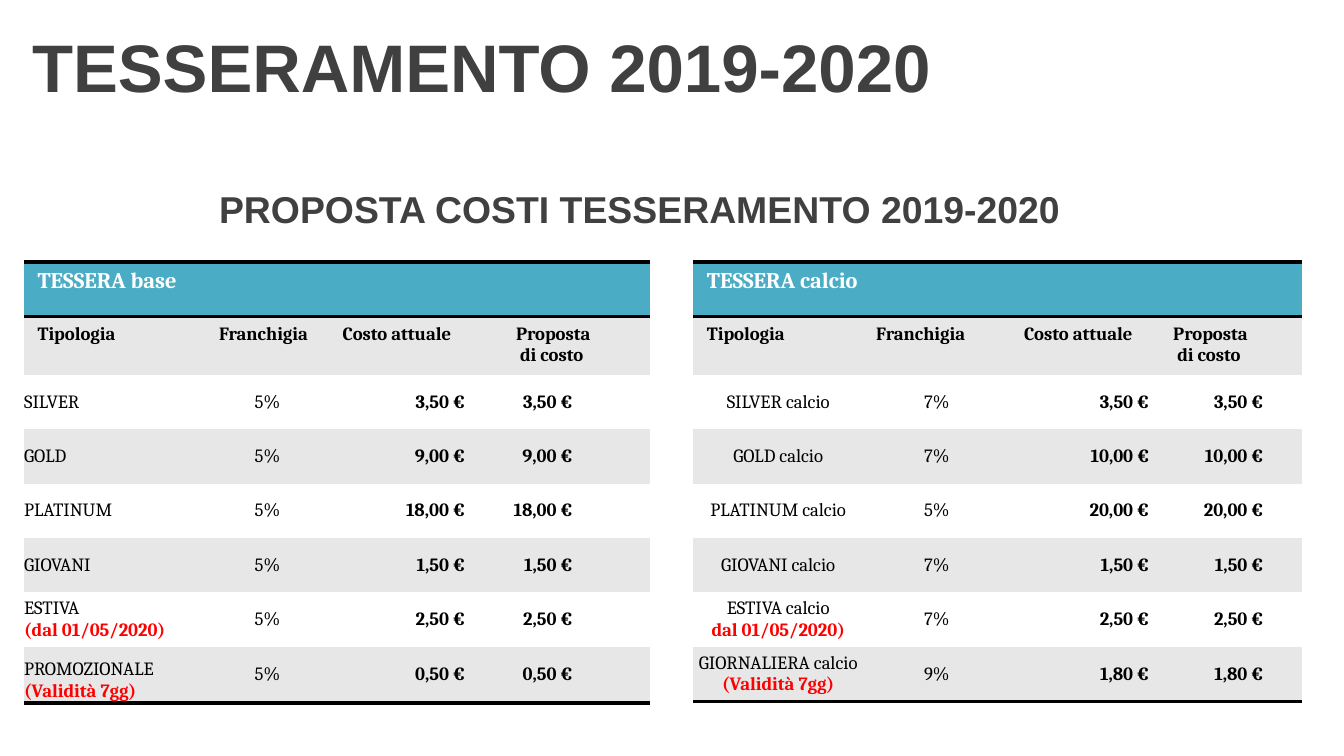
from pptx import Presentation
from pptx.dml.color import RGBColor
from pptx.enum.text import MSO_ANCHOR, PP_ALIGN
from pptx.oxml.ns import qn
from pptx.util import Inches, Pt
from lxml.etree import SubElement

# Content: rows are type, red note, excess, current cost, proposed cost
HEADINGS = [["Tipologia"], ["Franchigia"], ["Costo attuale"], ["Proposta", "di costo"]]
TABLES = [
    dict(title="TESSERA base", left=0.18, cols=[1.35, 0.92, 1.29, 1.1],
         align=PP_ALIGN.LEFT, price_gaps=[0.28, 0.58], last_spacing=1.5, rows=[
             ("SILVER", "", "5%", "3,50 €", "3,50 €"),
             ("GOLD", "", "5%", "9,00 €", "9,00 €"),
             ("PLATINUM", "", "5%", "18,00 €", "18,00 €"),
             ("GIOVANI", "", "5%", "1,50 €", "1,50 €"),
             ("ESTIVA", "(dal 01/05/2020)", "5%", "2,50 €", "2,50 €"),
             ("PROMOZIONALE", "(Validità 7gg)", "5%", "0,50 €", "0,50 €")]),
    dict(title="TESSERA calcio", left=5.16, cols=[1.26, 1.1, 1.11, 1.06],
         align=PP_ALIGN.CENTER, price_gaps=[0.08, 0.29], last_spacing=1, rows=[
             ("SILVER calcio", "", "7%", "3,50 €", "3,50 €"),
             ("GOLD calcio", "", "7%", "10,00 €", "10,00 €"),
             ("PLATINUM calcio", "", "5%", "20,00 €", "20,00 €"),
             ("GIOVANI calcio", "", "7%", "1,50 €", "1,50 €"),
             ("ESTIVA calcio", "dal 01/05/2020)", "7%", "2,50 €", "2,50 €"),
             ("GIORNALIERA calcio", "(Validità 7gg)", "9%", "1,80 €", "1,80 €")]),
]
TOP, ROW_H = Inches(1.95), Pt(29.15)
TEAL, GREY, WHITE, BLACK, RED, DARK = "4BACC6", "E7E7E7", "FFFFFF", "000000", "FF0000", "404040"
NO_STYLE = "{2D5ABB26-0587-4C30-8999-92F81FD0307C}"


def rgb(value):
    return RGBColor.from_string(value)


def add_run(p, text, size, color=BLACK, bold=True, font="Cambria"):
    r = p.add_run()
    r.text = text
    r.font.name, r.font.size, r.font.bold = font, Pt(size), bold
    r.font.color.rgb = rgb(color)


def add_heading(s, text, box, size, align, margin_left):
    tf = s.shapes.add_textbox(*map(Inches, box)).text_frame
    tf.word_wrap = True
    tf.vertical_anchor = MSO_ANCHOR.MIDDLE
    tf.margin_left = Inches(margin_left)
    tf.paragraphs[0].alignment = align
    add_run(tf.paragraphs[0], text, size, DARK, font="Arial")


def add_border(cell, side):
    ln = SubElement(cell._tc.get_or_add_tcPr(), qn("a:ln" + side), w=str(Pt(2)))
    SubElement(SubElement(ln, qn("a:solidFill")), qn("a:srgbClr"), val=BLACK)


def write_cell(cell, lines, align, gap=0):
    """Fill a data cell with (text, colour, bold) lines."""
    cell.vertical_anchor = MSO_ANCHOR.MIDDLE
    cell.margin_left = cell.margin_top = cell.margin_bottom = 0
    cell.margin_right = Inches(gap)
    for i, (text, color, bold) in enumerate(lines):
        p = cell.text_frame.add_paragraph() if i else cell.text_frame.paragraphs[0]
        p.alignment = align
        add_run(p, text, 10, color, bold)


def add_price_table(s, data):
    n_rows, n_cols = len(data["rows"]) + 2, len(HEADINGS)
    frame = s.shapes.add_table(n_rows, n_cols, Inches(data["left"]), TOP,
                               Inches(sum(data["cols"])), n_rows * ROW_H)
    table = frame.table
    table.first_row = table.horz_banding = False
    table._tbl.tblPr.find(qn("a:tableStyleId")).text = NO_STYLE
    for col, width in zip(table.columns, data["cols"]):
        col.width = Inches(width)

    # Borders and alternating fills
    for i, row in enumerate(table.rows):
        row.height = ROW_H
        for cell in row.cells:
            if i == 0:
                add_border(cell, "T")
            if i in (0, n_rows - 1):
                add_border(cell, "B")
            cell.fill.solid()
            cell.fill.fore_color.rgb = rgb(TEAL if i == 0 else GREY if i % 2 else WHITE)

    # Title and column headings
    table.cell(0, 0).merge(table.cell(0, n_cols - 1))
    add_run(table.cell(0, 0).text_frame.paragraphs[0], data["title"], 12, WHITE)
    for j, lines in enumerate(HEADINGS):
        tf = table.cell(1, j).text_frame
        for k, text in enumerate(lines):
            p = tf.add_paragraph() if k else tf.paragraphs[0]
            if k:
                p._p.get_or_add_pPr().set("marL", str(Inches(0.03)))
            add_run(p, text, 10)

    # Card types and prices
    for i, (kind, note, excess, *prices) in enumerate(data["rows"], 2):
        lines = [(kind, BLACK, False)] + ([(note, RED, True)] if note else [])
        write_cell(table.cell(i, 0), lines, data["align"])
        write_cell(table.cell(i, 1), [(excess, BLACK, False)], PP_ALIGN.CENTER)
        for j, (price, gap) in enumerate(zip(prices, data["price_gaps"]), 2):
            write_cell(table.cell(i, j), [(price, BLACK, True)], PP_ALIGN.RIGHT, gap)
    if data["last_spacing"] != 1:
        last = table.cell(n_rows - 1, 0).text_frame
        last.paragraphs[0].line_spacing = data["last_spacing"]


def main():
    prs = Presentation()
    prs.slide_width = Inches(10)
    prs.slide_height = prs.slide_width * 9 // 16
    s = prs.slides.add_slide(prs.slide_layouts[6])
    add_heading(s, "PROPOSTA COSTI TESSERAMENTO 2019-2020", (0.43, 1.24, 8.66, 0.63),
                20, PP_ALIGN.CENTER, 0.1)
    add_heading(s, "TESSERAMENTO 2019-2020", (0, 0, 10, 0.97), 36, PP_ALIGN.LEFT, 0.24)
    for data in TABLES:
        add_price_table(s, data)
    prs.save("out.pptx")


if __name__ == "__main__":
    main()
